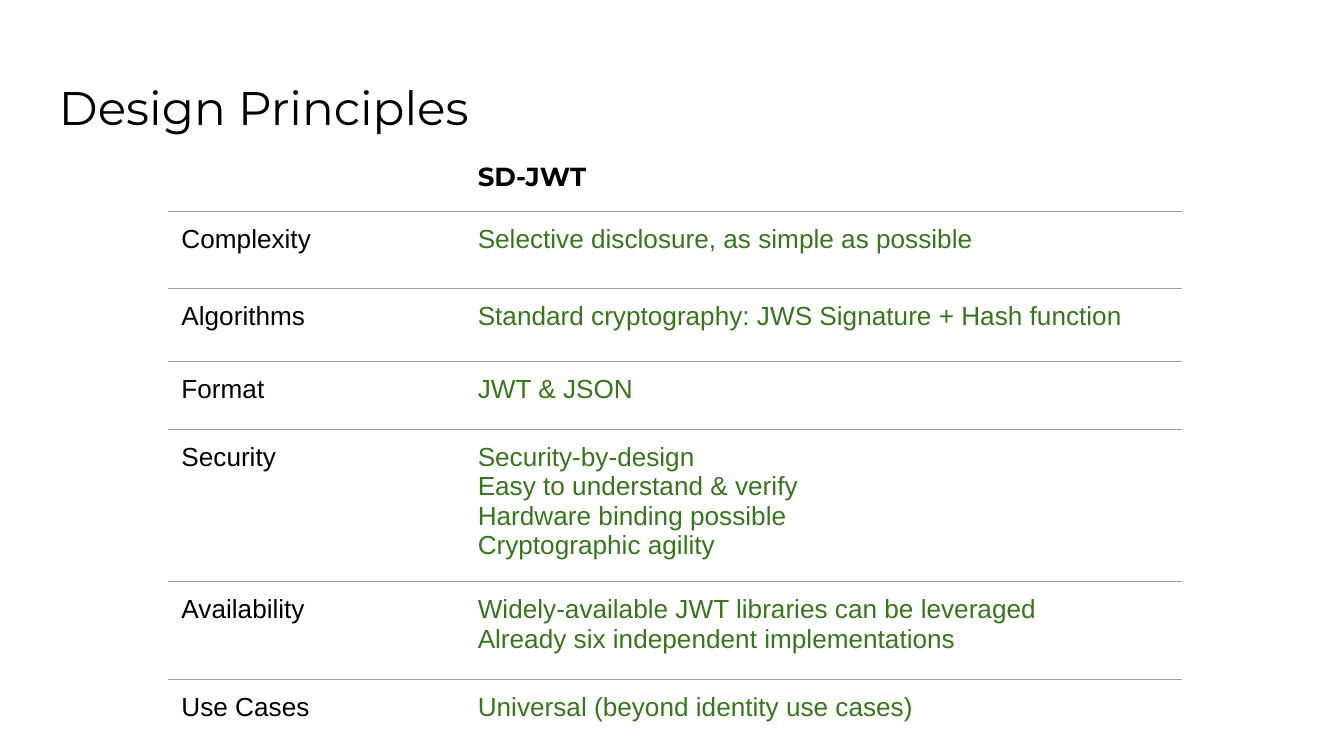
import dataclasses
import pptx
import pptx.dml.color
import pptx.oxml
import pptx.oxml.ns
import pptx.util

PX = 4572  # EMU per px, 200 px to the inch


@dataclasses.dataclass(frozen=True)
class Theme:
    ink: str = "000000"
    green: str = "38761D"
    rule: str = "9E9E9E"
    head: str = "Montserrat"
    body: str = "Arial"
    title: float = 25.2
    text: float = 14
    line: float = 0.75
    inset: int = 20


THEME = Theme()
COLS = [441, 1068]
ROWS = [  # height, label, value
    (95, "", "SD-JWT"),
    (114, "Complexity", "Selective disclosure, as simple as possible"),
    (109, "Algorithms", "Standard cryptography: JWS Signature + Hash function"),
    (101, "Format", "JWT & JSON"),
    (216, "Security", "Security-by-design\nEasy to understand & verify\n"
                      "Hardware binding possible\nCryptographic agility"),
    (145, "Availability", "Widely-available JWT libraries can be leveraged\v"
                          "Already six independent implementations"),
    (128, "Use Cases", "Universal (beyond identity use cases)"),
]


def px(num):
    return pptx.util.Emu(num * PX)


def style(frame, font, size, color, bold=False):
    for para in frame.paragraphs:
        para.font.name = font
        para.font.size = pptx.util.Pt(size)
        para.font.bold = bold
        para.font.color.rgb = pptx.dml.color.RGBColor.from_string(color)


def pad(item):
    gap = px(THEME.inset)
    item.margin_left = item.margin_right = gap
    item.margin_top = item.margin_bottom = gap


def edge(cell, sides):
    """Rule the given sides of a cell and clear the others."""
    props = cell._tc.get_or_add_tcPr()
    for side in "LRTB":
        fill = "<a:noFill/>"
        if side in sides:
            fill = f'<a:solidFill><a:srgbClr val="{THEME.rule}"/></a:solidFill>'
        props.append(pptx.oxml.parse_xml(
            f'<a:ln{side} {pptx.oxml.ns.nsdecls("a")} '
            f'w="{pptx.util.Pt(THEME.line)}">{fill}</a:ln{side}>'))


def title(slide, left, top, width, height):
    box = slide.shapes.add_textbox(px(left), px(top), px(width), px(height))
    frame = box.text_frame
    frame.word_wrap = True
    pad(frame)
    frame.text = "Design Principles"
    style(frame, THEME.head, THEME.title, THEME.ink)


def grid(slide, left, top):
    high = sum(row[0] for row in ROWS)
    table = slide.shapes.add_table(len(ROWS), len(COLS), px(left), px(top),
                                   px(sum(COLS)), px(high)).table
    table.first_row = table.horz_banding = False
    for col, width in zip(table.columns, COLS):
        col.width = px(width)
    last = len(ROWS) - 1
    for r, (height, *texts) in enumerate(ROWS):
        table.rows[r].height = px(height)
        # No rule above the first row or below the last
        sides = "B" if r == 0 else "T" if r == last else "TB"
        for c, text in enumerate(texts):
            cell = table.cell(r, c)
            pad(cell)
            edge(cell, sides)
            cell.fill.background()
            cell.text = text
            font = THEME.body if r else THEME.head
            color = THEME.green if r and c else THEME.ink
            style(cell.text_frame, font, THEME.text, color, bold=r == 0)


def main():
    deck = pptx.Presentation()
    deck.slide_width, deck.slide_height = px(2000), px(1125)
    slide = deck.slides.add_slide(deck.slide_layouts[6])
    title(slide, 68, 97, 1864, 126)
    grid(slide, 250, 220)
    deck.save("out.pptx")


if __name__ == "__main__":
    main()
